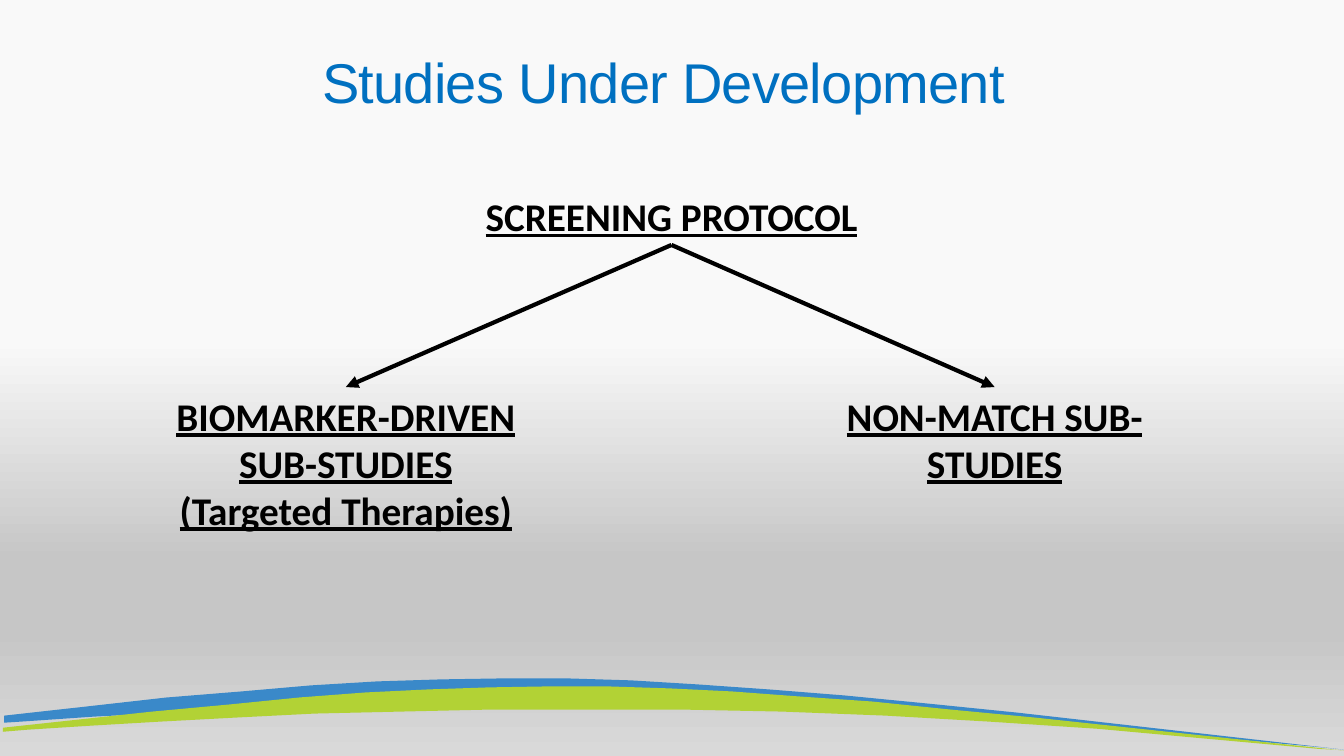
"""Build the slide of studies under development with its branching protocol."""
from copy import deepcopy
from dataclasses import dataclass

from pptx import Presentation
from pptx.dml.color import RGBColor
from pptx.enum.shapes import MSO_CONNECTOR
from pptx.enum.text import MSO_ANCHOR, MSO_AUTO_SIZE, PP_ALIGN
from pptx.oxml.ns import qn
from pptx.oxml.xmlchemy import OxmlElement
from pptx.shapes.autoshape import Shape
from pptx.slide import Slide
from pptx.util import Inches, Pt

BLACK = RGBColor(0x00, 0x00, 0x00)
TITLE_BLUE = RGBColor(0x00, 0x70, 0xC0)
RIBBON_BLUE = RGBColor(0x3A, 0x89, 0xC9)
RIBBON_GREEN = RGBColor(0xB2, 0xD2, 0x35)
PALE = RGBColor(0xF9, 0xF9, 0xF9)
GREY = RGBColor(0xC6, 0xC6, 0xC6)
LIGHT_GREY = RGBColor(0xD9, 0xD9, 0xD9)
BACKDROP = [(0.45, PALE), (0.74, GREY), (0.83, GREY), (1.0, LIGHT_GREY)]
BOTTOM, TOP = 2, 0


@dataclass
class Ribbon:
    color: RGBColor
    upper_edge: list[tuple[float, float]]
    lower_edge: list[tuple[float, float]]


@dataclass
class Label:
    text: str
    left: float
    top: float
    width: float
    height: float
    font: str = "Calibri"
    size: int = 28
    color: RGBColor = BLACK
    strong: bool = True


RIBBONS = [
    Ribbon(
        RIBBON_BLUE,
        [(0.04, 7.1), (0.85, 7.01), (1.65, 6.92), (2.39, 6.86), (3.08, 6.8), (3.74, 6.76),
         (4.38, 6.74), (5, 6.73), (5.62, 6.73), (6.26, 6.75), (6.92, 6.79), (7.63, 6.84),
         (8.38, 6.9), (9.2, 6.98), (10.09, 7.07), (13.35, 7.44)],
        [(13.26, 7.43), (13.06, 7.41), (10.74, 7.2), (9.62, 7.11), (8.52, 7.05), (7.44, 7.01),
         (6.39, 6.99), (5.37, 6.98), (4.39, 6.99), (3.45, 7.01), (2.56, 7.03), (1.71, 7.07),
         (0.93, 7.11), (0.2, 7.16), (0.04, 7.17)],
    ),
    Ribbon(
        RIBBON_GREEN,
        [(0.03, 7.22), (0.68, 7.15), (1.51, 7.06), (2.27, 6.99), (2.97, 6.92), (3.63, 6.87),
         (4.25, 6.84), (4.85, 6.82), (5.44, 6.81), (6.03, 6.81), (6.64, 6.83), (7.26, 6.86),
         (7.93, 6.91), (8.65, 6.96), (9.43, 7.04), (10.27, 7.12), (13.36, 7.45)],
        [(13.27, 7.44), (13.08, 7.43), (10.88, 7.23), (9.82, 7.16), (8.78, 7.1), (7.76, 7.06),
         (6.76, 7.04), (5.79, 7.04), (4.86, 7.04), (3.97, 7.06), (3.12, 7.08), (2.33, 7.12),
         (1.58, 7.16), (0.9, 7.2), (0.27, 7.24), (0.03, 7.26)],
    ),
]
TITLE = Label("Studies Under Development", 0.83, 0.15, 11.5, 1.04,
              "Arial", 40, TITLE_BLUE, strong=False)
SCREENING = Label("SCREENING PROTOCOL", 3.69, 1.86, 5.94, 0.57)
SUB_STUDIES = [
    Label("BIOMARKER-DRIVEN SUB-STUDIES\n(Targeted Therapies)", 1.26, 3.84, 4.34, 1.51),
    Label("NON-MATCH SUB-STUDIES", 7.88, 3.84, 3.97, 1.04),
]


def paint_backdrop(page: Slide) -> None:
    fill = page.background.fill
    fill.gradient()
    fill.gradient_angle = 270
    stop_list = page._element.find(".//" + qn("a:gsLst"))
    while len(stop_list) < len(BACKDROP):
        stop_list.append(deepcopy(stop_list[0]))
    for stop, (position, color) in zip(fill.gradient_stops, BACKDROP):
        stop.position = position
        stop.color.rgb = color


def draw_ribbon(page: Slide, ribbon: Ribbon) -> None:
    outline = [(Inches(x), Inches(y)) for x, y in ribbon.upper_edge + ribbon.lower_edge]
    builder = page.shapes.build_freeform(*outline[0])
    builder.add_line_segments(outline[1:], close=True)
    shape = builder.convert_to_shape()
    shape.shadow.inherit = False
    shape.fill.solid()
    shape.fill.fore_color.rgb = ribbon.color
    shape.line.fill.background()


def draw_label(page: Slide, label: Label) -> Shape:
    box = page.shapes.add_textbox(Inches(label.left), Inches(label.top),
                                  Inches(label.width), Inches(label.height))
    frame = box.text_frame
    frame.text = label.text
    frame.word_wrap = True
    if label.strong:
        frame.auto_size = MSO_AUTO_SIZE.SHAPE_TO_FIT_TEXT
    for para in frame.paragraphs:
        para.alignment = PP_ALIGN.CENTER
        for span in para.runs:
            span.font.name = label.font
            span.font.size = Pt(label.size)
            span.font.color.rgb = label.color
            span.font.bold = label.strong
            span.font.underline = label.strong
    return box


def draw_title(page: Slide) -> None:
    frame = draw_label(page, TITLE).text_frame
    frame.vertical_anchor = MSO_ANCHOR.BOTTOM
    para = frame.paragraphs[0]
    para.line_spacing = 0.85
    para.runs[0].font._element.set("spc", "-50")


def draw_arrow(page: Slide, source: Shape, target: Shape) -> None:
    arrow = page.shapes.add_connector(MSO_CONNECTOR.STRAIGHT, 0, 0, 0, 0)
    arrow.begin_connect(source, BOTTOM)
    arrow.end_connect(target, TOP)
    arrow.line.color.rgb = BLACK
    arrow.line.width = Pt(3)
    head = OxmlElement("a:tailEnd")
    head.set("type", "triangle")
    arrow.line._get_or_add_ln().append(head)
    arrow._element.spPr.append(OxmlElement("a:effectLst"))


def main() -> None:
    deck = Presentation()
    deck.slide_width = Inches(13.33)
    deck.slide_height = Inches(7.5)
    page = deck.slides.add_slide(deck.slide_layouts[6])
    paint_backdrop(page)
    for ribbon in RIBBONS:
        draw_ribbon(page, ribbon)
    draw_title(page)
    screening_box = draw_label(page, SCREENING)
    study_boxes = [draw_label(page, label) for label in SUB_STUDIES]
    for study_box in study_boxes:
        draw_arrow(page, screening_box, study_box)
    deck.save("out.pptx")


if __name__ == "__main__":
    main()
